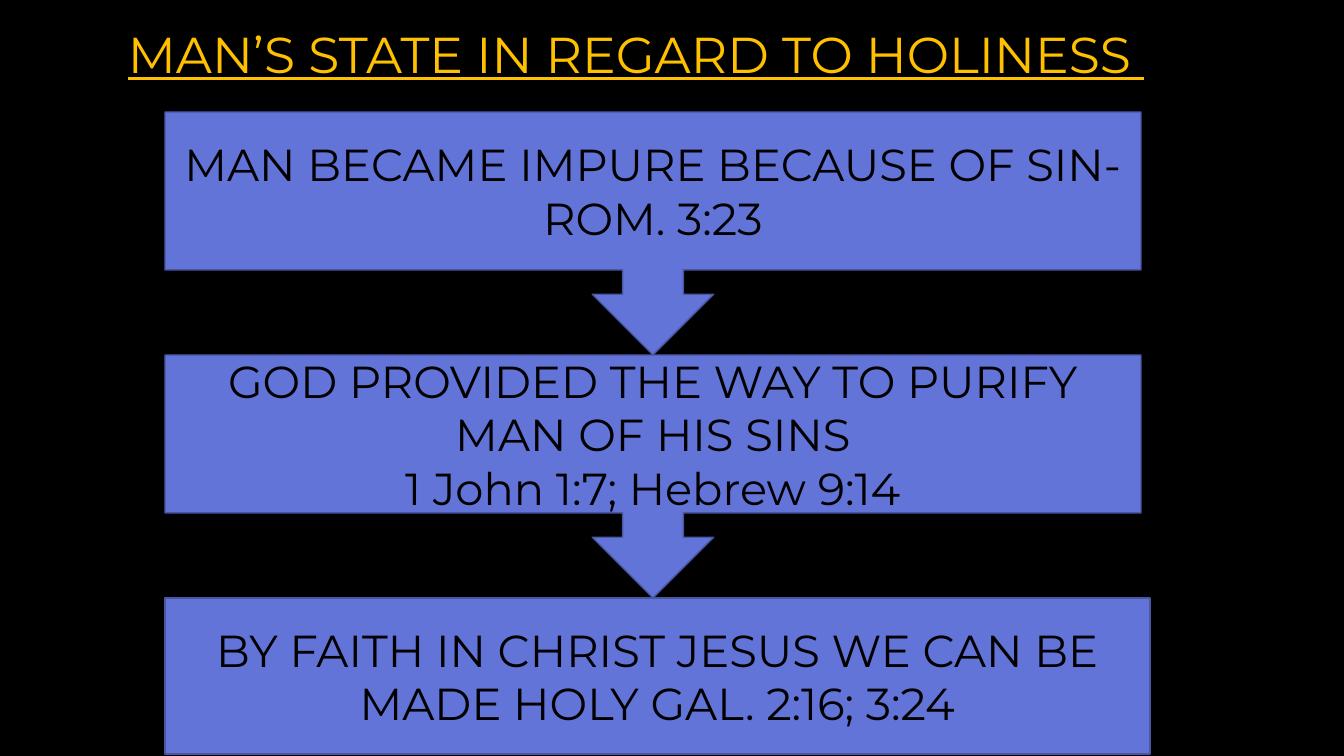
from dataclasses import dataclass

from pptx import Presentation
from pptx.dml.color import RGBColor
from pptx.enum.shapes import MSO_SHAPE as Shape
from pptx.enum.text import MSO_ANCHOR as Anchor, MSO_AUTO_SIZE as AutoSize, PP_ALIGN as Align
from pptx.util import Emu, Pt

EMU_PER_PX = 12192000 / 1344


def px(n):
    return Emu(round(n * EMU_PER_PX))


@dataclass(frozen=True)
class Theme:
    font: str = "Montserrat"
    background: str = "000000"
    title: str = "FFC000"
    fill: str = "6274D8"
    line: str = "4956A0"
    text: str = "000000"
    title_size: int = 36
    body_size: int = 32
    line_width: int = 1


class SlideBuilder:
    """Draws themed elements on the current slide, measured in px."""

    def __init__(self, slide, theme):
        self.slide = slide
        self.theme = theme

    def background(self):
        fill = self.slide.background.fill
        fill.solid()
        fill.fore_color.rgb = RGBColor.from_string(self.theme.background)

    def set_text(self, tf, text, size, color, align, underline=None):
        tf.text = text
        tf.word_wrap = True
        for p in tf.paragraphs:
            p.alignment = align
            for r in p.runs:
                r.font.name = self.theme.font
                r.font.size = Pt(size)
                r.font.underline = underline
                r.font.color.rgb = RGBColor.from_string(color)

    def title(self, text, x, y, w, h):
        tf = self.slide.shapes.add_textbox(px(x), px(y), px(w), px(h)).text_frame
        self.set_text(tf, text, self.theme.title_size, self.theme.title, Align.LEFT, underline=True)
        tf.auto_size = AutoSize.SHAPE_TO_FIT_TEXT

    def step(self, kind, text, x, y, w, h):
        sp = self.slide.shapes.add_shape(kind, px(x), px(y), px(w), px(h))
        sp.shadow.inherit = False
        sp.fill.solid()
        sp.fill.fore_color.rgb = RGBColor.from_string(self.theme.fill)
        sp.line.color.rgb = RGBColor.from_string(self.theme.line)
        sp.line.width = Pt(self.theme.line_width)
        tf = sp.text_frame
        tf.vertical_anchor = Anchor.MIDDLE
        self.set_text(tf, text, self.theme.body_size, self.theme.text, Align.CENTER)


def main():
    prs = Presentation()
    prs.slide_width, prs.slide_height = px(1344), px(756)
    builder = SlideBuilder(prs.slides.add_slide(prs.slide_layouts[6]), Theme())
    builder.background()
    builder.title("MAN’S STATE IN REGARD TO HOLINESS ", 118, 18, 1151, 71)

    left, top, pitch = 165, 112, 243
    steps = [
        (Shape.DOWN_ARROW_CALLOUT, "MAN BECAME IMPURE BECAUSE OF SIN-ROM. 3:23", 976, pitch),
        (Shape.DOWN_ARROW_CALLOUT,
         "GOD PROVIDED THE WAY TO PURIFY MAN OF HIS SINS\n1 John 1:7; Hebrew 9:14", 976, pitch),
        (Shape.RECTANGLE, "BY FAITH IN CHRIST JESUS WE CAN BE MADE HOLY GAL. 2:16; 3:24", 985, 156),
    ]
    for i, (kind, text, w, h) in enumerate(steps):
        builder.step(kind, text, left, top + i * pitch, w, h)

    prs.save("out.pptx")


if __name__ == "__main__":
    main()
